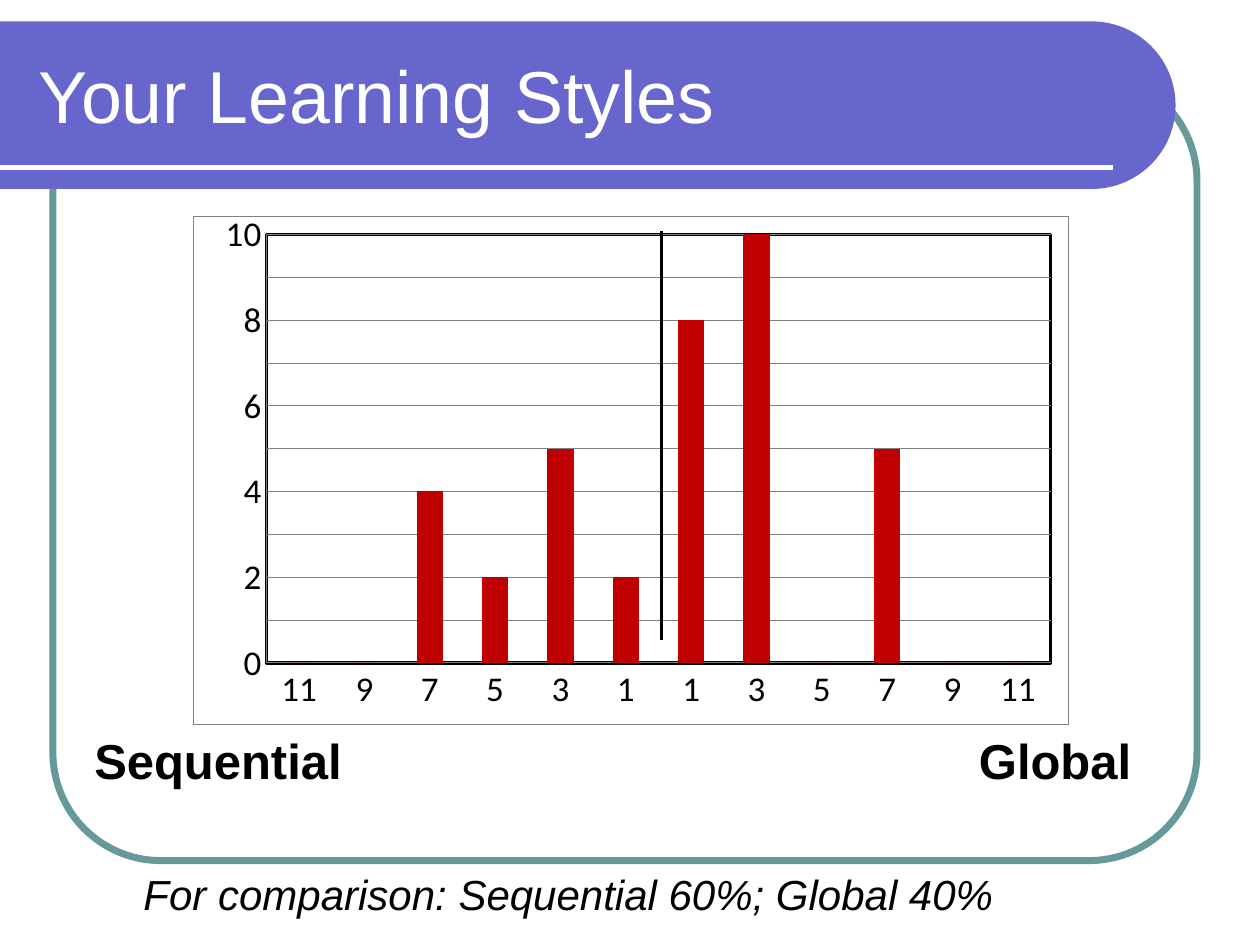
from lxml import etree
from pptx import Presentation
from pptx.chart.data import CategoryChartData
from pptx.dml.color import RGBColor
from pptx.enum.chart import XL_CHART_TYPE as ChartType, XL_TICK_MARK as Tick
from pptx.enum.shapes import MSO_CONNECTOR as Connector, MSO_SHAPE as Shape
from pptx.enum.text import MSO_ANCHOR as Anchor
from pptx.oxml import parse_xml
from pptx.oxml.ns import nsdecls, qn
from pptx.util import Inches, Pt

BLACK, WHITE, GREY = "000000", "FFFFFF", "808080"
TEAL, VIOLET, RED = "669999", "6666CC", "C00000"


def color(value):
    return RGBColor.from_string(value)


def set_line(line, value, width):
    line.color.rgb = color(value)
    line.width = Pt(width)


def add_box(page, kind, left, top, width, height, adjustments):
    box = page.shapes.add_shape(kind, Inches(left), Inches(top),
                                Inches(width), Inches(height))
    box.shadow.inherit = False
    for index, value in enumerate(adjustments):
        box.adjustments[index] = value
    return box


def add_line(page, x1, y1, x2, y2, value, width):
    line = page.shapes.add_connector(Connector.STRAIGHT, Inches(x1), Inches(y1),
                                     Inches(x2), Inches(y2))
    set_line(line.line, value, width)
    etree.SubElement(line._element.spPr, qn("a:effectLst"))


def add_text(page, text, left, top, width, height, size, value=BLACK,
             bold=False, italic=False, anchor=Anchor.TOP):
    box = page.shapes.add_textbox(Inches(left), Inches(top),
                                  Inches(width), Inches(height))
    frame = box.text_frame
    frame.word_wrap = True
    frame.vertical_anchor = anchor
    para = frame.paragraphs[0]
    para.text = text
    font = para.font
    font.name, font.size, font.color.rgb = "Arial", Pt(size), color(value)
    font.bold, font.italic = bold, italic
    return para


def add_right_tab(para, position):
    tabs = parse_xml(f'<a:tabLst {nsdecls("a")}>'
                     f'<a:tab pos="{Inches(position)}" algn="r"/></a:tabLst>')
    properties = para._p.get_or_add_pPr()
    properties.find(qn("a:defRPr")).addprevious(tabs)


def area_format(line_color, width):
    return parse_xml(
        f'<c:spPr {nsdecls("c", "a")}>'
        f'<a:solidFill><a:srgbClr val="{WHITE}"/></a:solidFill>'
        f'<a:ln w="{Pt(width)}"><a:solidFill><a:srgbClr val="{line_color}"/>'
        '</a:solidFill></a:ln></c:spPr>')


def set_plot_layout(plot_area, x, y, width, height):
    for old in plot_area.findall(qn("c:layout")):
        plot_area.remove(old)
    plot_area.insert(0, parse_xml(
        f'<c:layout {nsdecls("c")}><c:manualLayout><c:layoutTarget val="inner"/>'
        '<c:xMode val="edge"/><c:yMode val="edge"/>'
        f'<c:x val="{x}"/><c:y val="{y}"/><c:w val="{width}"/><c:h val="{height}"/>'
        '</c:manualLayout></c:layout>'))


def add_style_chart(page):
    scores = ["11", "9", "7", "5", "3", "1"]
    data = CategoryChartData()
    data.categories = scores + scores[::-1]
    data.add_series("Series 1", [0, 0, 4, 2, 5, 2, 8, 10, 0, 5, 0, 0])
    chart = page.shapes.add_chart(ChartType.COLUMN_CLUSTERED, Inches(1.53), Inches(1.69),
                                  Inches(6.95), Inches(4.06), data).chart
    chart.has_legend = chart.has_title = False
    chart.font.name, chart.font.size = "Calibri", Pt(20)
    chart.font.color.rgb = color(BLACK)

    # Columns
    plot = chart.plots[0]
    plot.gap_width, plot.vary_by_categories = 150, False
    fill = plot.series[0].format.fill
    fill.solid()
    fill.fore_color.rgb = color(RED)

    # Axes
    scale = chart.value_axis
    scale.minimum_scale, scale.maximum_scale, scale.major_unit = 0, 10, 1
    scale.has_major_gridlines = True
    scale.major_tick_mark = Tick.INSIDE
    chart.category_axis.major_tick_mark = Tick.NONE
    for part in (scale, chart.category_axis, scale.major_gridlines):
        set_line(part.format.line, GREY, 0.25)

    # Plot and chart areas
    space = chart._chartSpace
    plot_area = space.chart.plotArea
    set_plot_layout(plot_area, 0.084, 0.035, 0.896, 0.844)
    plot_area.append(area_format(BLACK, 2))
    space.chart.addnext(area_format(GREY, 0.25))


def add_frame(page):
    outline = add_box(page, Shape.ROUNDED_RECTANGLE, 0.42, 0.58, 9.08, 6.25, [0.137])
    outline.fill.background()
    set_line(outline.line, TEAL, 4)

    # Title band: a tall shape with a round top, turned to point right
    length, height, top = 9.33, 1.33, 0.17
    band = add_box(page, Shape.ROUND_2_SAME_RECTANGLE, (length - height) / 2,
                   top + (height - length) / 2, height, length, [0.5, 0])
    band.rotation = 90
    band.fill.solid()
    band.fill.fore_color.rgb = color(VIOLET)
    band.line.fill.background()
    add_line(page, 0, 1.33, 8.83, 1.33, WHITE, 3)


def main():
    deck = Presentation()
    deck.slide_width, deck.slide_height = Inches(10), Inches(7.5)
    page = deck.slides.add_slide(deck.slide_layouts[6])

    add_frame(page)
    add_text(page, "Your Learning Styles", 0.21, 0.25, 8.77, 1, 42, WHITE,
             anchor=Anchor.MIDDLE)

    # Captions
    note = add_text(page, "For comparison: Sequential 60%; Global 40%",
                    1.04, 6.92, 8.05, 0.45, 24, italic=True)
    note.line_spacing = 0.8
    ends = add_text(page, "Sequential\tGlobal", 0.65, 5.75, 8.6, 0.57, 28, bold=True)
    add_right_tab(ends, 8.23)

    # Chart with its dividing line
    add_style_chart(page)
    add_line(page, 5.25, 5.08, 5.25, 1.83, BLACK, 2.25)

    deck.save("out.pptx")


if __name__ == "__main__":
    main()
